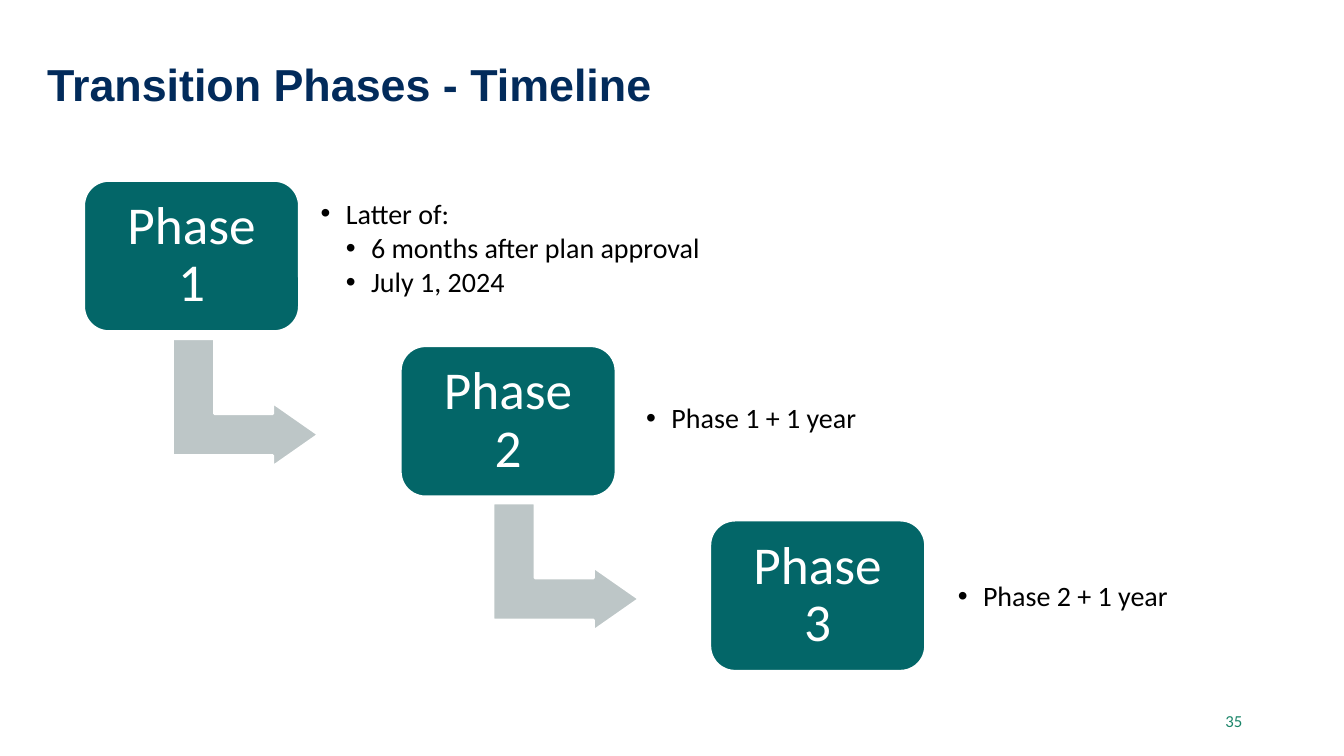
"""Build the slide that shows the three transition phases as a timeline."""
from dataclasses import dataclass

import lxml.etree
import pptx
import pptx.dml.color
import pptx.enum.shapes
import pptx.enum.text
import pptx.oxml.ns
import pptx.util

Inches = pptx.util.Inches
Pt = pptx.util.Pt
Align = pptx.enum.text.PP_ALIGN
Anchor = pptx.enum.text.MSO_ANCHOR
Preset = pptx.enum.shapes.MSO_SHAPE


@dataclass(frozen=True)
class Theme:
    """Colours, fonts and type sizes of the slide."""
    navy: str = "022B5B"
    teal: str = "036668"
    green: str = "1A8569"
    grey: str = "BDC6C7"
    white: str = "FFFFFF"
    black: str = "000000"
    heading_font: str = "Arial"
    body_font: str = "Calibri"
    title_size: int = 32
    phase_size: int = 38
    timing_size: int = 20
    number_size: int = 12
    outline: int = 2


@dataclass(frozen=True)
class Bounds:
    """Left, top, width and height in inches."""
    left: float
    top: float
    width: float
    height: float

    def lengths(self) -> list:
        """Return the four lengths in slide units."""
        return [Inches(n) for n in (self.left, self.top, self.width, self.height)]


@dataclass(frozen=True)
class Timing:
    """One bulleted line and its indent level."""
    wording: str
    level: int = 0


@dataclass(frozen=True)
class Phase:
    """One step with its place, its timing lines and the arrow after it."""
    name: str
    left: float
    top: float
    timing_area: Bounds
    timings: tuple[Timing, ...]
    timing_bottom: float = 0.08
    arrow_at: tuple[float, float] | None = None


THEME = Theme()
PHASE_SIZE = (2.14, 1.5)
ARROW_SIZE = (1.27, 1.45)
INDENT = 0.25

PHASES = (
    Phase("Phase 1", 0.83, 1.79, Bounds(3.1, 2, 4.01, 1.21),
          (Timing("Latter of:"), Timing("6 months after plan approval", 1),
           Timing("July 1, 2024", 1)),
          timing_bottom=0.34, arrow_at=(1.8, 3.27)),
    Phase("Phase 2", 3.97, 3.43, Bounds(6.33, 3.56, 3.34, 1.21),
          (Timing("Phase 1 + 1 year"),), arrow_at=(4.98, 4.9)),
    Phase("Phase 3", 7.04, 5.16, Bounds(9.42, 5.32, 2.64, 1.21),
          (Timing("Phase 2 + 1 year"),)),
)


def apply(target, formats: dict) -> None:
    """Set each named format value on the target."""
    for name, value in formats.items():
        setattr(target, name, value)


def color(code: str) -> pptx.dml.color.RGBColor:
    """Return the colour for a hex code."""
    return pptx.dml.color.RGBColor.from_string(code)


def set_frame(frame, anchor, insets: tuple[float, float, float, float]) -> None:
    """Wrap and anchor a text frame with left, top, right and bottom insets."""
    sides = ("margin_left", "margin_top", "margin_right", "margin_bottom")
    apply(frame, {"word_wrap": True, "vertical_anchor": anchor,
                  **{side: Inches(n) for side, n in zip(sides, insets)}})


def write(paragraph, wording: str, size: int, ink: str, formats: dict,
          font: str = THEME.body_font, bold: bool = False) -> None:
    """Write one formatted run into a paragraph."""
    apply(paragraph, formats)
    run = paragraph.add_run()
    run.text = wording
    apply(run.font, {"name": font, "size": Pt(size), "bold": bold})
    run.font.color.rgb = color(ink)


def add_bullet(paragraph, level: int) -> None:
    """Give a paragraph a hanging round bullet."""
    properties = paragraph._p.get_or_add_pPr()
    properties.set("marL", str(Inches(INDENT * (level + 1))))
    properties.set("indent", str(-Inches(INDENT)))
    for tag, attribute, value in (("a:buFont", "typeface", "Arial"),
                                  ("a:buChar", "char", "•")):
        lxml.etree.SubElement(properties, pptx.oxml.ns.qn(tag)).set(attribute, value)


def add_block(slide, preset, bounds: Bounds, fill: str, adjustments: tuple[float, ...]):
    """Draw a filled preset shape with the white outline."""
    block = slide.shapes.add_shape(preset, *bounds.lengths())
    block.shadow.inherit = False
    for position, value in enumerate(adjustments):
        block.adjustments[position] = value
    block.fill.solid()
    block.fill.fore_color.rgb = color(fill)
    block.line.color.rgb = color(THEME.white)
    block.line.width = Pt(THEME.outline)
    return block


def add_phase(slide, phase: Phase) -> None:
    """Draw a phase with its timing and the arrow to the next phase."""
    if phase.arrow_at:
        arrow = add_block(slide, Preset.BENT_UP_ARROW, Bounds(*phase.arrow_at, *ARROW_SIZE),
                          THEME.grey, (0.328, 0.25, 0.358))
        arrow.rotation = 90
    step = add_block(slide, Preset.ROUNDED_RECTANGLE,
                     Bounds(phase.left, phase.top, *PHASE_SIZE), THEME.teal, (0.167,))
    set_frame(step.text_frame, Anchor.MIDDLE, (0.23,) * 4)
    write(step.text_frame.paragraphs[0], phase.name, THEME.phase_size, THEME.white,
          {"alignment": Align.CENTER, "line_spacing": 0.9})

    details = slide.shapes.add_textbox(*phase.timing_area.lengths()).text_frame
    set_frame(details, Anchor.MIDDLE, (0.08, 0.08, 0.08, phase.timing_bottom))
    for position, timing in enumerate(phase.timings):
        line = details.add_paragraph() if position else details.paragraphs[0]
        add_bullet(line, timing.level)
        write(line, timing.wording, THEME.timing_size, THEME.black,
              {"level": timing.level, "line_spacing": 0.9, "space_after": Pt(3)})


def main() -> None:
    """Build and save the slide."""
    deck = pptx.Presentation()
    apply(deck, {"slide_width": Inches(13.33), "slide_height": Inches(7.5)})
    slide = deck.slides.add_slide(deck.slide_layouts[6])

    title = slide.shapes.add_textbox(*Bounds(0.37, 0.3, 12.34, 0.79).lengths()).text_frame
    set_frame(title, Anchor.BOTTOM, (0.1, 0.05, 0.1, 0))
    write(title.paragraphs[0], "Transition Phases - Timeline", THEME.title_size, THEME.navy,
          {"line_spacing": 0.8}, THEME.heading_font, bold=True)

    for phase in PHASES:
        add_phase(slide, phase)

    number = slide.shapes.add_textbox(*Bounds(9.42, 6.95, 3, 0.4).lengths()).text_frame
    set_frame(number, Anchor.MIDDLE, (0.1, 0.05, 0.1, 0.05))
    write(number.paragraphs[0], "35", THEME.number_size, THEME.green,
          {"alignment": Align.RIGHT})

    deck.save("out.pptx")


if __name__ == "__main__":
    main()
